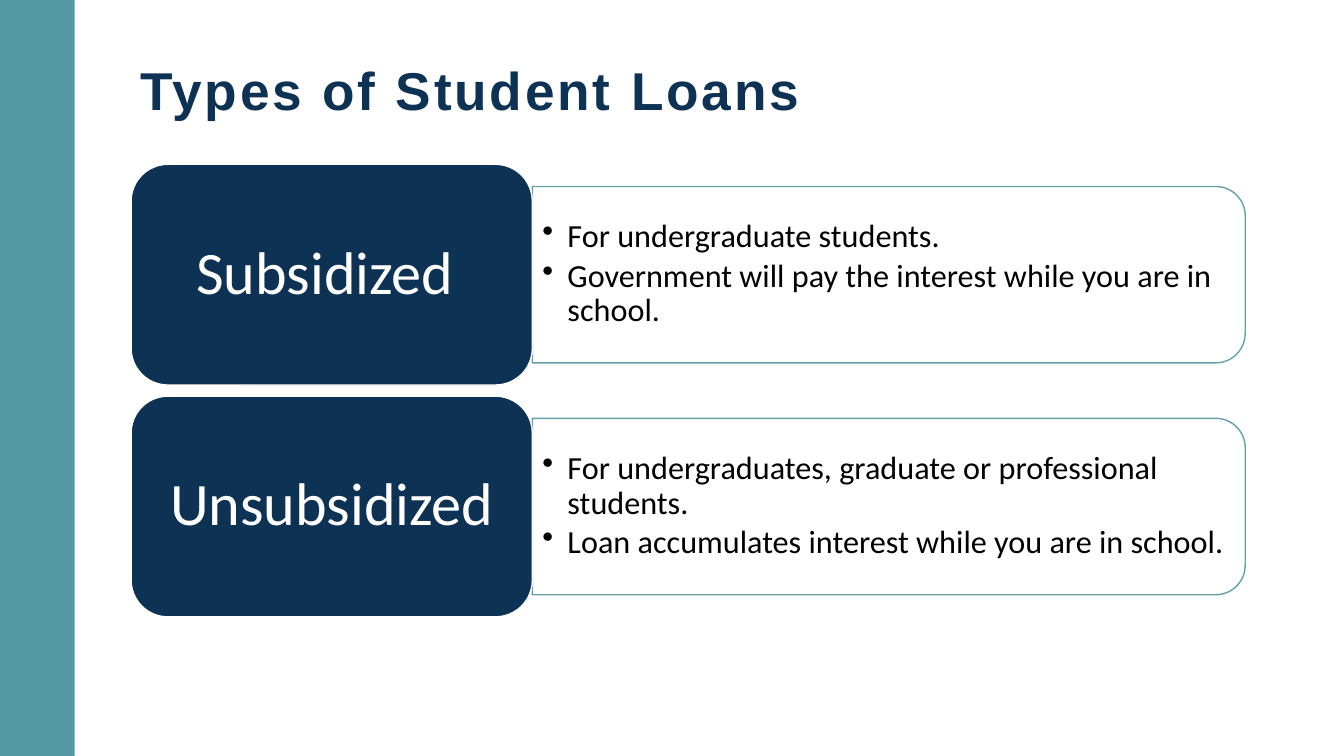
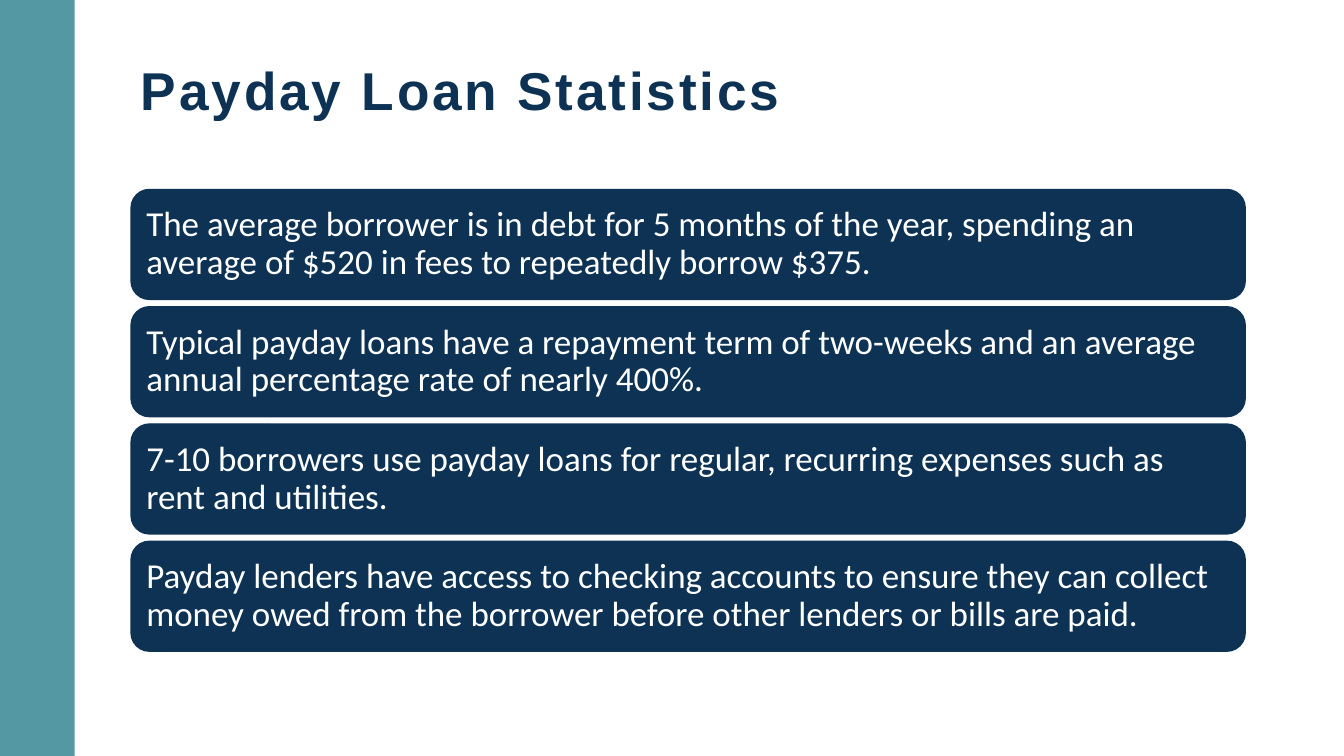
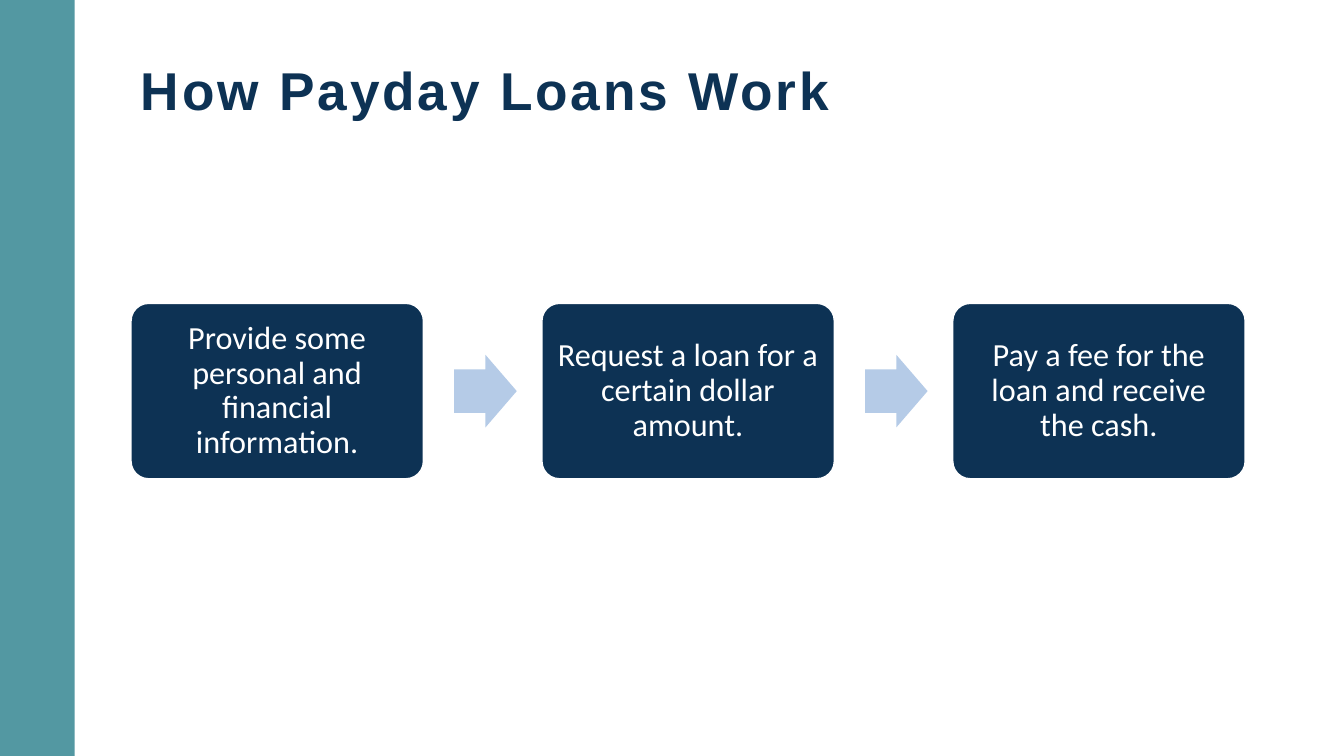
import pptx
import pptx.util
import pptx.dml.color
import pptx.enum.shapes
import pptx.enum.text
import pptx.oxml.ns
import lxml.etree

Inches = pptx.util.Inches
Pt = pptx.util.Pt
RGBColor = pptx.dml.color.RGBColor
SHAPE = pptx.enum.shapes.MSO_SHAPE
ALIGN = pptx.enum.text.PP_ALIGN
ANCHOR = pptx.enum.text.MSO_ANCHOR
qn = pptx.oxml.ns.qn

NAVY = RGBColor(0x0D, 0x32, 0x54)
TEAL = RGBColor(0x53, 0x98, 0xA2)
PALE_BLUE = RGBColor(0xB5, 0xCB, 0xE7)
WHITE = RGBColor(0xFF, 0xFF, 0xFF)
BLACK = RGBColor(0x00, 0x00, 0x00)

TITLE_FONT = "Arial"
BODY_FONT = "Calibri"
SLIDE_WIDTH, SLIDE_HEIGHT = 13.33, 7.5
CONTENT_LEFT, CONTENT_WIDTH = 1.3, 11.05

LOAN_TYPES = [
    ("Subsidized ", [
        "For undergraduate students.",
        "Government will pay the interest while you are in school.",
    ]),
    ("Unsubsidized", [
        "For undergraduates, graduate or professional students.",
        "Loan accumulates interest while you are in school.",
    ]),
]
STATISTICS = [
    "The average borrower is in debt for 5 months of the year, spending an average of $520 in fees to repeatedly borrow $375.",
    "Typical payday loans have a repayment term of two-weeks and an average annual percentage rate of nearly 400%.",
    "7-10 borrowers use payday loans for regular, recurring expenses such as rent and utilities.",
    "Payday lenders have access to checking accounts to ensure they can collect money owed from the borrower before other lenders or bills are paid.",
]
STEPS = [
    "Provide some personal and financial information.",
    "Request a loan for a certain dollar amount.",
    "Pay a fee for the loan and receive the cash.",
]


def add_block(slide, kind, box, fill, line=None):
    block = slide.shapes.add_shape(kind, *map(Inches, box))
    block.shadow.inherit = False
    block.fill.solid()
    block.fill.fore_color.rgb = fill
    if line is None:
        block.line.fill.background()
    else:
        block.line.color.rgb = line
        block.line.width = Pt(1)
    return block


def set_insets(frame, across, down):
    frame.word_wrap = True
    frame.margin_left = frame.margin_right = Inches(across)
    frame.margin_top = frame.margin_bottom = Inches(down)


def style_font(paragraph, font, size, color):
    for run in paragraph.runs:
        run.font.name = font
        run.font.size = Pt(size)
        run.font.color.rgb = color


def add_card(slide, box, text, size, align, line=WHITE, insets=(0.1, 0.1), corner=None):
    card = add_block(slide, SHAPE.ROUNDED_RECTANGLE, box, NAVY, line)
    if corner is not None:
        card.adjustments[0] = corner
    frame = card.text_frame
    set_insets(frame, *insets)
    frame.vertical_anchor = ANCHOR.MIDDLE
    frame.text = text
    paragraph = frame.paragraphs[0]
    paragraph.alignment = align
    paragraph.line_spacing = 0.9
    style_font(paragraph, BODY_FONT, size, WHITE)


def add_bullets(slide, box, points):
    frame = slide.shapes.add_textbox(*map(Inches, box)).text_frame
    set_insets(frame, 0.1, 0.05)
    frame.vertical_anchor = ANCHOR.MIDDLE
    frame.text = "\n".join(points)
    for index, paragraph in enumerate(frame.paragraphs):
        properties = paragraph._p.get_or_add_pPr()
        properties.set("marL", str(Inches(0.25)))
        properties.set("indent", str(-Inches(0.25)))
        lxml.etree.SubElement(properties, qn("a:buChar")).set("char", "•")
        paragraph.line_spacing = 0.9
        if index:
            paragraph.space_before = Pt(3.5)
        style_font(paragraph, BODY_FONT, 23, BLACK)


def add_detail_panel(slide, box, points):
    left, top, width, height = box
    turn = (width - height) / 2
    panel = add_block(slide, SHAPE.ROUND_2_SAME_RECTANGLE,
                      (left + turn, top - turn, height, width), WHITE, TEAL)
    panel.rotation = 90
    for color in panel._element.spPr.iter(qn("a:srgbClr")):
        lxml.etree.SubElement(color, qn("a:alpha")).set("val", "90000")
    add_bullets(slide, (left, top + 0.08, width - 0.08, height - 0.17), points)


def add_loan_types(slide, box):
    left, top, width, height = box
    label_width, label_height, panel_height = 3.98, 2.19, 1.75
    pitch = (height - label_height) / (len(LOAN_TYPES) - 1)
    for row, (label, points) in enumerate(LOAN_TYPES):
        row_top = top + row * pitch
        panel_top = row_top + (label_height - panel_height) / 2
        add_detail_panel(slide, (left + label_width, panel_top,
                                 width - label_width, panel_height), points)
        add_card(slide, (left, row_top, label_width, label_height), label, 43,
                 ALIGN.CENTER, insets=(0.18, 0.09))


def add_statistics(slide, box):
    left, top, width, height = box
    row_height = 1.09
    pitch = (height - row_height) / (len(STATISTICS) - 1)
    for row, statistic in enumerate(STATISTICS):
        add_card(slide, (left, top + row * pitch, width, row_height), statistic, 25,
                 ALIGN.LEFT, line=NAVY)


def add_steps(slide, box):
    left, top, width, height = box
    step_width, arrow_width, arrow_height = 2.9, 0.62, 0.72
    pitch = (width - step_width) / (len(STEPS) - 1)
    for column, step in enumerate(STEPS):
        step_left = left + column * pitch
        if column:
            arrow = add_block(slide, SHAPE.RIGHT_ARROW,
                              (step_left - 0.87, top + (height - arrow_height) / 2,
                               arrow_width, arrow_height), PALE_BLUE)
            arrow.adjustments[0] = 0.6
            arrow.adjustments[1] = 0.5
        add_card(slide, (step_left, top, step_width, height), step, 23,
                 ALIGN.CENTER, corner=0.1)


def add_titled_slide(deck, title):
    slide = deck.slides.add_slide(deck.slide_layouts[6])
    add_block(slide, SHAPE.RECTANGLE, (0, 0, 0.74, SLIDE_HEIGHT), TEAL)
    heading = slide.shapes.add_textbox(
        *map(Inches, (CONTENT_LEFT, 0.51, CONTENT_WIDTH, 0.74))).text_frame
    set_insets(heading, 0.1, 0.05)
    heading.vertical_anchor = ANCHOR.BOTTOM
    heading.text = title
    paragraph = heading.paragraphs[0]
    style_font(paragraph, TITLE_FONT, 38, NAVY)
    for run in paragraph.runs:
        run.font.bold = True
        run._r.get_or_add_rPr().set("spc", "200")
    return slide


def main():
    deck = pptx.Presentation()
    deck.slide_width = Inches(SLIDE_WIDTH)
    deck.slide_height = Inches(SLIDE_HEIGHT)
    for title, add_content, top, height in [
        ("Types of Student Loans", add_loan_types, 1.63, 4.49),
        ("Payday Loan Statistics", add_statistics, 1.88, 4.58),
        ("How Payday Loans Work", add_steps, 3.01, 1.74),
    ]:
        slide = add_titled_slide(deck, title)
        add_content(slide, (CONTENT_LEFT, top, CONTENT_WIDTH, height))
    deck.save("out.pptx")


if __name__ == "__main__":
    main()
